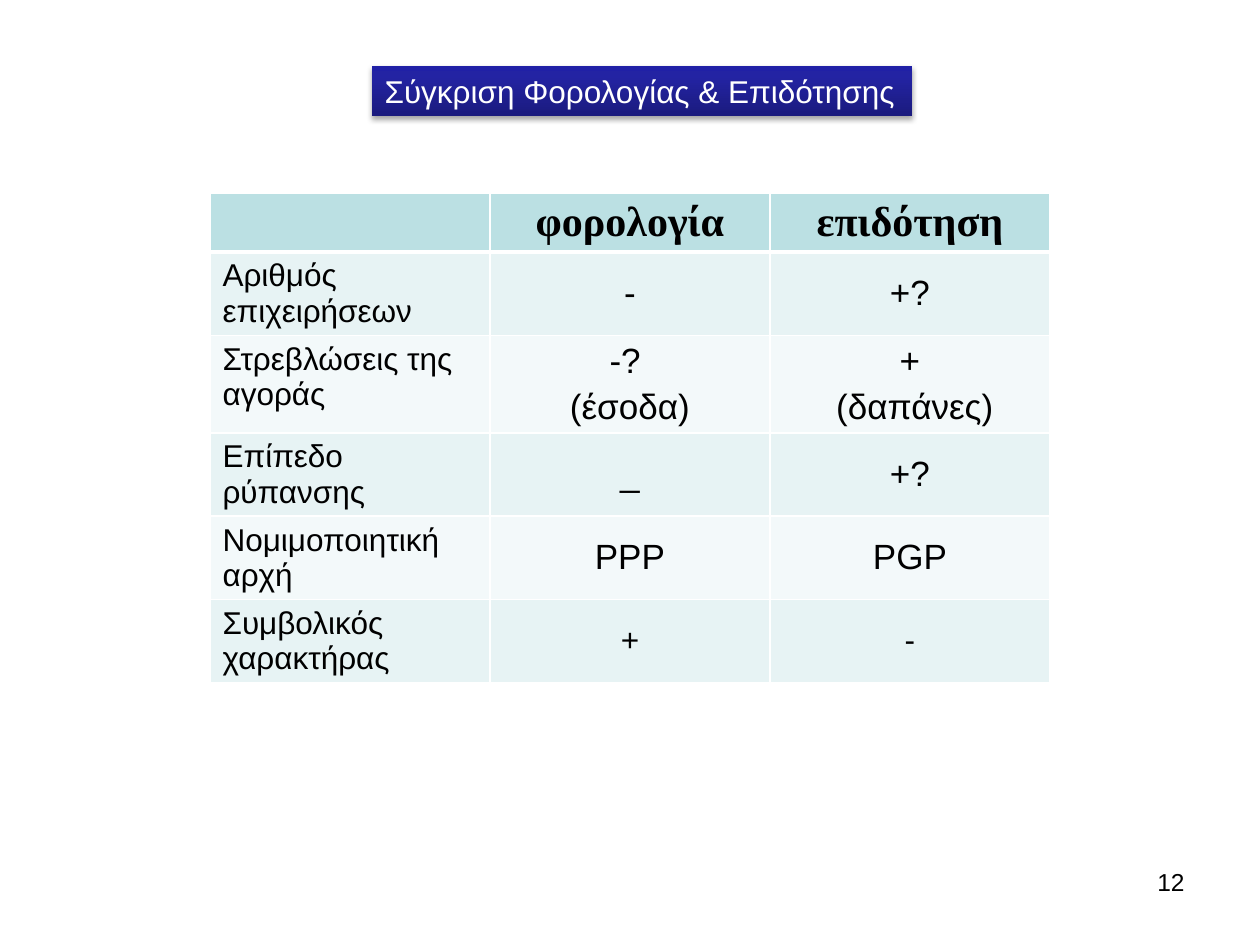
from lxml.etree import SubElement
from pptx import Presentation
from pptx.dml.color import RGBColor
from pptx.enum.text import MSO_ANCHOR, MSO_AUTO_SIZE, PP_ALIGN
from pptx.oxml.ns import qn
from pptx.util import Pt

PX = 914400 // 126


def write(frame, text, size=20, font="Arial", color="000000", bold=False,
          align=PP_ALIGN.CENTER, before=0):
    frame.text = text
    for paragraph in frame.paragraphs:
        paragraph.alignment = align
        paragraph.space_before = Pt(before)
        for run in paragraph.runs:
            run.font.size = Pt(size)
            run.font.name = font
            run.font.bold = bold
            run.font.color.rgb = RGBColor.from_string(color)


def add_xml(parent, tag, **attributes):
    return SubElement(parent, qn(tag), {k: str(v) for k, v in attributes.items()})


prs = Presentation()
prs.slide_width, prs.slide_height = 1260 * PX, 945 * PX
slide = prs.slides.add_slide(prs.slide_layouts[5])

# Title bar with gradient and shadow
title = slide.shapes.title
title.left, title.top, title.width, title.height = [v * PX for v in (372, 66, 540, 50)]
write(title.text_frame, "Σύγκριση Φορολογίας & Επιδότησης", size=18,
      color="FFFFFF", align=PP_ALIGN.LEFT)
title.text_frame.word_wrap = False
title.text_frame.auto_size = MSO_AUTO_SIZE.NONE
title.text_frame.vertical_anchor = MSO_ANCHOR.TOP

bar = title._element.spPr
add_xml(bar, "a:prstGeom", prst="rect")
gradient = add_xml(bar, "a:gradFill", rotWithShape=1)
stops = add_xml(gradient, "a:gsLst")
for percent, color in ((0, "1B1B7E"), (80, "2323A3"), (100, "2020A6")):
    add_xml(add_xml(stops, "a:gs", pos=percent * 1000), "a:srgbClr", val=color)
add_xml(gradient, "a:lin", ang=270 * 60000, scaled=0)
shadow = add_xml(add_xml(bar, "a:effectLst"), "a:outerShdw", blurRad=Pt(3.1),
                 dist=Pt(1.8), dir=90 * 60000, rotWithShape=0)
shadow_color = add_xml(shadow, "a:srgbClr", val="000000")
add_xml(shadow_color, "a:alpha", val=35000)

# Comparison table: the rows grow to fit their text
rows = [
    ("", "φορολογία", "επιδότηση"),
    ("Αριθμός επιχειρήσεων", "-", "+?"),
    ("Στρεβλώσεις της αγοράς", "-? \n(έσοδα)", "+\n (δαπάνες)"),
    ("Επίπεδο ρύπανσης", "_", "+?"),
    ("Νομιμοποιητική αρχή", "PPP", "PGP"),
    ("Συμβολικός χαρακτήρας", "+", "-"),
]
comparison = slide.shapes.add_table(len(rows), 3, 210 * PX, 193 * PX, 840 * PX,
                                    len(rows) * 52 * PX).table
comparison.first_row = comparison.horz_banding = False

for r, texts in enumerate(rows):
    fill = "BBE0E3" if r == 0 else ("F3F9FA", "E7F3F4")[r % 2]
    for c, text in enumerate(texts):
        cell = comparison.cell(r, c)
        if r == 0:
            write(cell.text_frame, text, size=24, font="Times New Roman", bold=True)
        elif c == 0:
            write(cell.text_frame, text, size=18, align=PP_ALIGN.LEFT)
        else:
            # The symbolic row is set in the size of the row labels
            write(cell.text_frame, text, size=18 if r == 5 else 20, before=4)
            cell.vertical_anchor = MSO_ANCHOR.MIDDLE
        for side in "LRTB":
            thick = (r, side) in ((0, "B"), (1, "T"))
            border = add_xml(cell._tc.get_or_add_tcPr(), f"a:ln{side}",
                             w=Pt(3 if thick else 1))
            add_xml(add_xml(border, "a:solidFill"), "a:srgbClr", val="FFFFFF")
        cell.fill.solid()
        cell.fill.fore_color.rgb = RGBColor.from_string(fill)

# Page number
page_number = slide.shapes.add_textbox(903 * PX, 861 * PX, 294 * PX, 65 * PX)
page_number.text_frame.word_wrap = True
write(page_number.text_frame, "12", size=14, align=PP_ALIGN.RIGHT)

prs.save("out.pptx")
